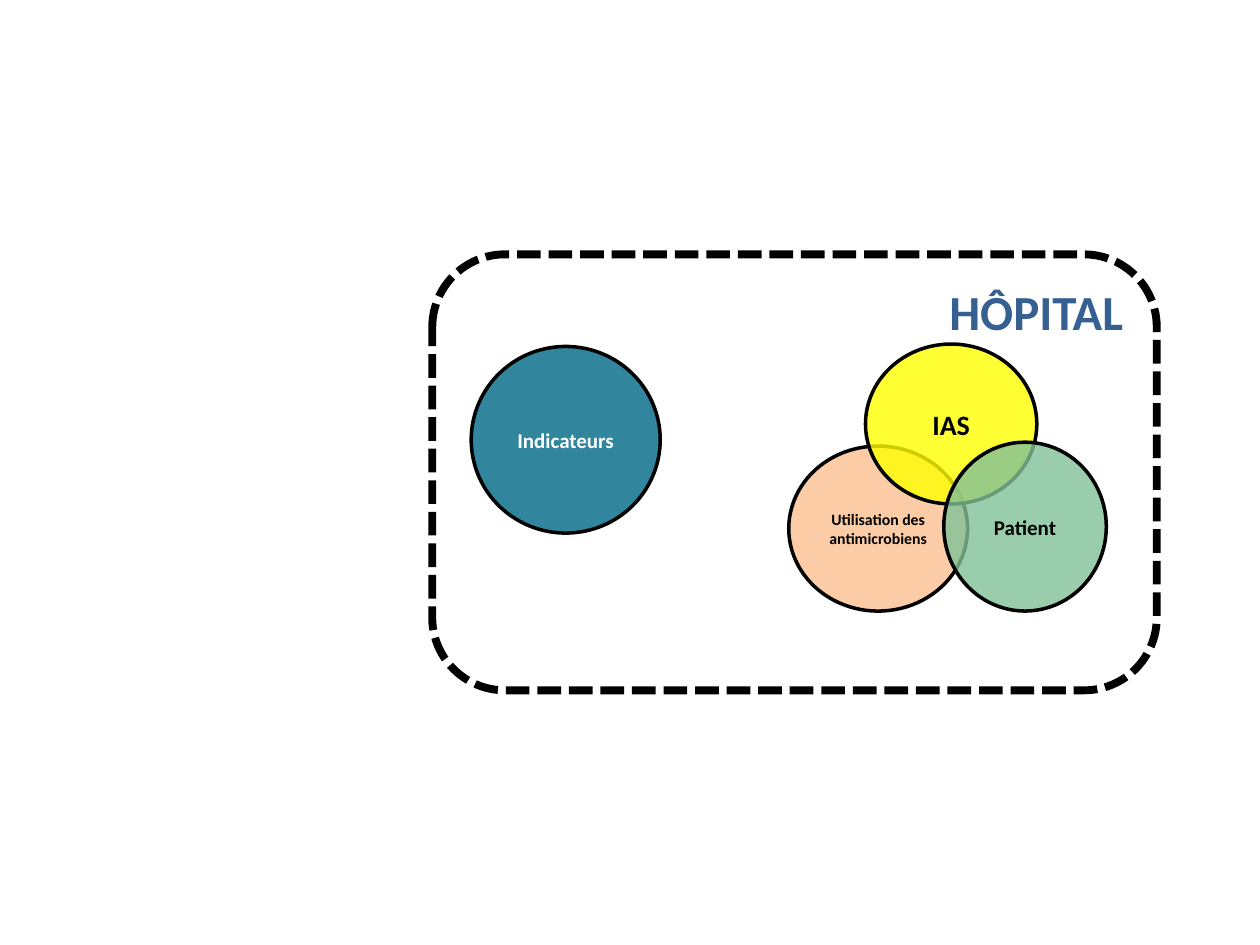
from lxml.etree import SubElement
from pptx import Presentation
from pptx.dml.color import RGBColor
from pptx.enum.dml import MSO_LINE
from pptx.enum.shapes import MSO_SHAPE
from pptx.enum.text import MSO_ANCHOR, PP_ALIGN
from pptx.oxml.ns import qn
from pptx.util import Pt

THEME = {
    "font": "Calibri",
    "ink": "000000", "white": "FFFFFF", "title": "376092",
    "teal": "31859C", "peach": "FAC090", "yellow": "FFFF00", "green": "81C198",
    "small": 9, "body": 12, "large": 16, "heading": 28,
    "outline": 2, "frame": 4.5, "overlap_opacity": 80,
}

CIRCLES = [
    ("Indicateurs", (269.3, 198, 108, 106.6), "teal", "white", "body", 100),
    ("Utilisation des antimicrobiens", (450.7, 254.9, 102.2, 94.3),
     "peach", "ink", "small", THEME["overlap_opacity"]),
    ("IAS", (494.6, 196.6, 97.9, 91.4), "yellow", "ink", "large", THEME["overlap_opacity"]),
    ("Patient", (539.3, 252.7, 92.9, 96.5), "green", "ink", "body", THEME["overlap_opacity"]),
]
HOSPITAL = ("HÔPITAL", (247, 145.4, 414, 249.1))


def color(name):
    """Return the theme colour of that name."""
    return RGBColor.from_string(THEME[name])


def apply_format(target, values):
    """Set each attribute of the target from a dict."""
    for attribute, value in values.items():
        setattr(target, attribute, value)


def add_region(slide, preset, label, box, ink, size, align, anchor, width):
    """Add an outlined, labelled region without fill."""
    region = slide.shapes.add_shape(preset, *map(Pt, box))
    region.shadow.inherit = False
    region.fill.background()
    region.line.color.rgb = color("ink")
    region.line.width = Pt(THEME[width])
    apply_format(region.text_frame, {"word_wrap": True, "vertical_anchor": anchor})
    paragraph = region.text_frame.paragraphs[0]
    paragraph.alignment = align
    caption = paragraph.add_run()
    caption.text = label
    apply_format(caption.font, {"name": THEME["font"], "size": Pt(THEME[size]), "bold": True})
    caption.font.color.rgb = color(ink)
    return region


def add_circle(slide, label, box, fill, ink, size, opacity):
    """Add a filled circle, see-through where opacity is below 100."""
    circle = add_region(slide, MSO_SHAPE.OVAL, label, box, ink, size,
                        PP_ALIGN.CENTER, MSO_ANCHOR.MIDDLE, "outline")
    circle.fill.solid()
    circle.fill.fore_color.rgb = color(fill)
    if opacity < 100:
        tint = circle.fill._xPr.find(qn("a:solidFill"))[0]
        SubElement(tint, qn("a:alpha"), val=str(opacity * 1000))


def main():
    """Build the hospital slide."""
    deck = Presentation()
    apply_format(deck, {"slide_width": Pt(720), "slide_height": Pt(540)})
    slide = deck.slides.add_slide(deck.slide_layouts[6])
    for circle in CIRCLES:
        add_circle(slide, *circle)
    hospital = add_region(slide, MSO_SHAPE.ROUNDED_RECTANGLE, *HOSPITAL, "title", "heading",
                          PP_ALIGN.RIGHT, MSO_ANCHOR.TOP, "frame")
    hospital.line.dash_style = MSO_LINE.SQUARE_DOT
    hospital.line._ln.find(qn("a:prstDash")).set("val", "sysDash")
    deck.save("out.pptx")


if __name__ == "__main__":
    main()
